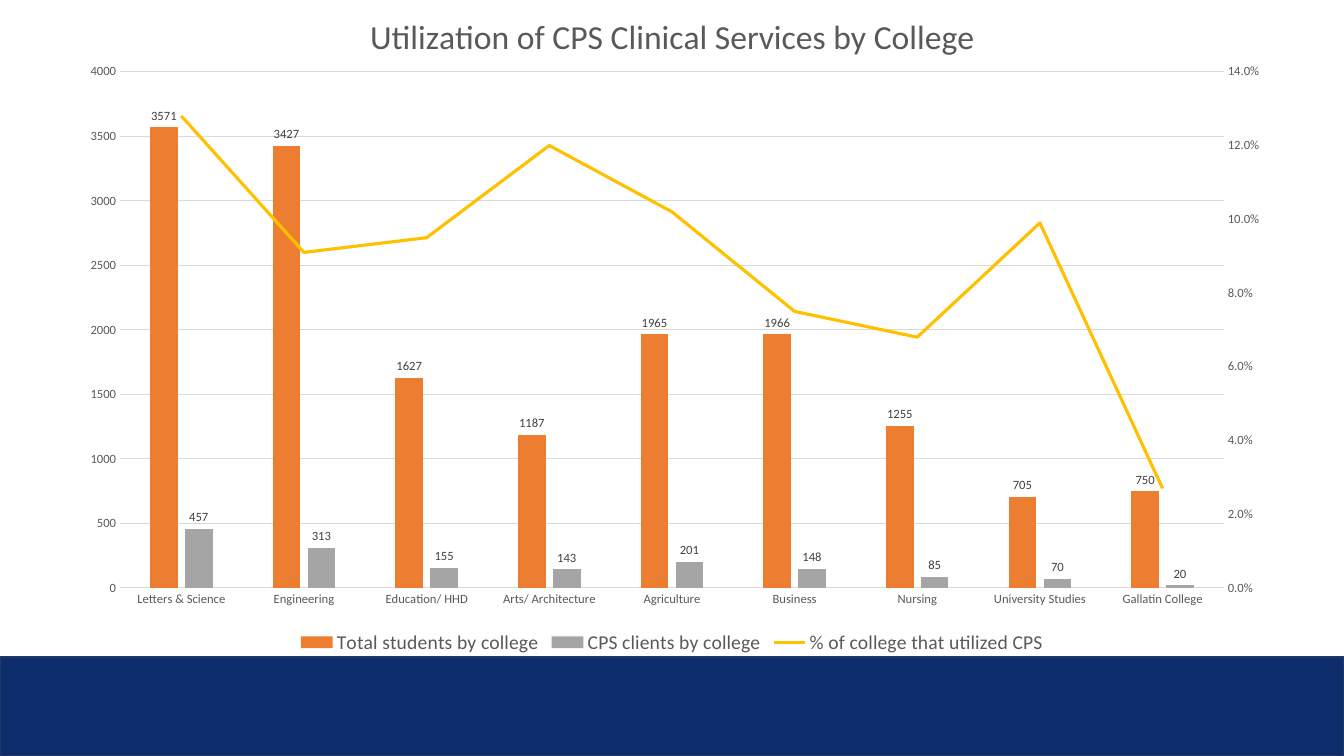
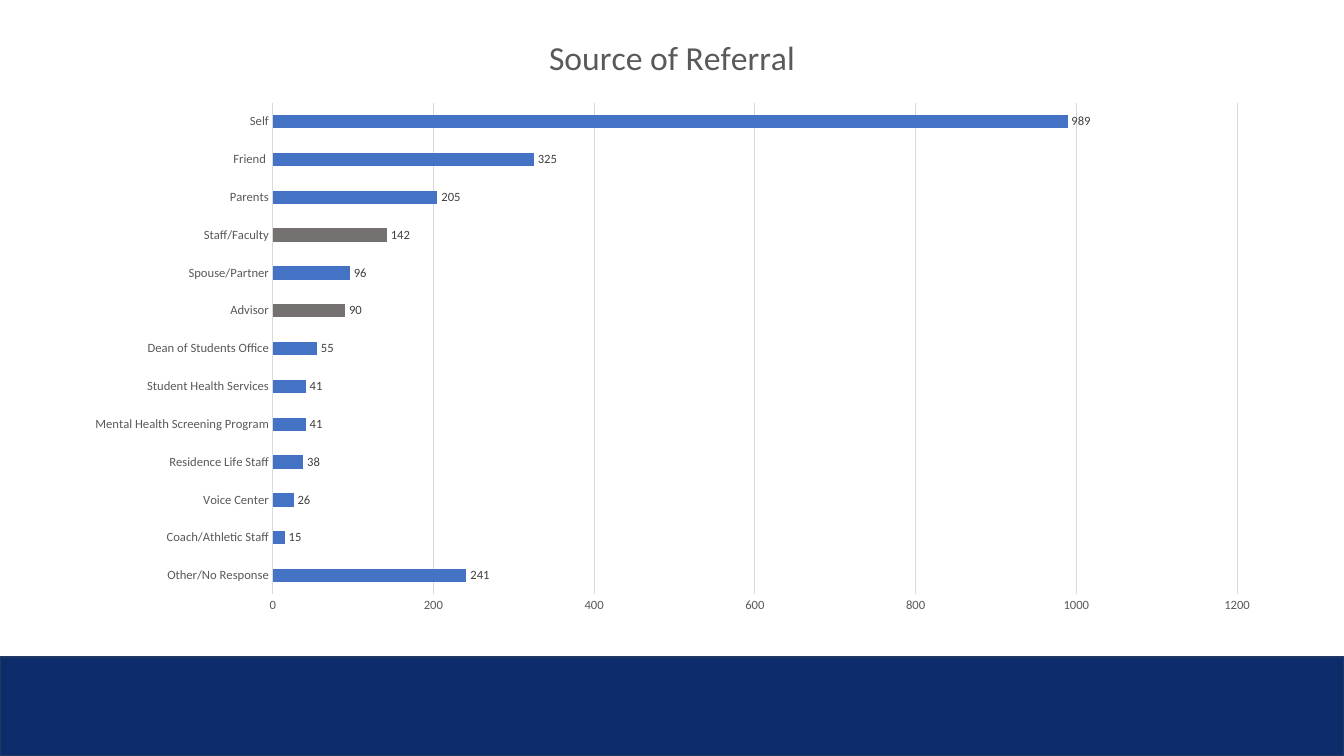
import copy

from pptx import Presentation
from pptx import util as u
from pptx.chart import axis as axes
from pptx.chart import data as chart_data
from pptx.dml.color import RGBColor
from pptx.enum import chart as kinds
from pptx.enum import shapes
from pptx.oxml import parse_xml
from pptx.oxml.ns import nsdecls, qn

COLORS = {
    "band": "0D2C6C", "band_edge": "203864", "text": "595959", "label": "404040",
    "grid": "D9D9D9", "students": "ED7D31", "clients": "A5A5A5", "share": "FFC000",
    "referral": "4472C4", "campus_staff": "767171", "base": "000000",
}
FONT = "Calibri"
COLUMNS, ROWS = 19, 100
BAND_ROW = 86.9

COLLEGES = [
    # name, total students, clients, share of college
    ("Letters & Science", 3571, 457, 0.128),
    ("Engineering", 3427, 313, 0.091),
    ("Education/ HHD", 1627, 155, 0.095),
    ("Arts/ Architecture", 1187, 143, 0.12),
    ("Agriculture", 1965, 201, 0.102),
    ("Business", 1966, 148, 0.075),
    ("Nursing", 1255, 85, 0.068),
    ("University Studies", 705, 70, 0.099),
    ("Gallatin College", 750, 20, 0.027),
]
REFERRALS = {
    "Other/No Response": 241, "Coach/Athletic Staff": 15, "Voice Center": 26,
    "Residence Life Staff": 38, "Mental Health Screening Program": 41,
    "Student Health Services": 41, "Dean of Students Office": 55, "Advisor": 90,
    "Spouse/Partner": 96, "Staff/Faculty": 142, "Parents": 205, "Friend ": 325,
    "Self": 989,
}


def rgb(name):
    return RGBColor.from_string(COLORS[name])


class Slides:
    """Holds the shared style and the current slide."""

    def __init__(self):
        self.deck = Presentation()
        self.deck.slide_width, self.deck.slide_height = u.Inches(13.33), u.Inches(7.5)
        self.layout = self.deck.slide_layouts[6]
        for holder in list(self.layout.placeholders):
            holder.element.getparent().remove(holder.element)
        self.page = None

    def open_page(self):
        self.page = self.deck.slides.add_slide(self.layout)
        self.add_band()

    def place(self, column, row, columns, rows):
        wide = self.deck.slide_width / COLUMNS
        high = self.deck.slide_height / ROWS
        return [int(n) for n in (column * wide, row * high, columns * wide, rows * high)]

    def add_band(self):
        band = self.page.shapes.add_shape(
            shapes.MSO_SHAPE.RECTANGLE, *self.place(0, BAND_ROW, COLUMNS, ROWS - BAND_ROW))
        band.shadow.inherit = False
        band.fill.solid()
        band.fill.fore_color.rgb = rgb("band")
        band.line.color.rgb = rgb("band_edge")
        band.line.width = u.Pt(1)

    @staticmethod
    def set_font(font, size, color="text"):
        font.name, font.size, font.bold = FONT, u.Pt(size), False
        font.color.rgb = rgb(color)

    def add_chart(self, kind, spot, title, categories, series, gap, top, step, plot_area):
        data = chart_data.CategoryChartData()
        data.categories = categories
        for name, values, number_format in series:
            data.add_series(name, values, number_format)
        chart = self.page.shapes.add_chart(kind, *self.place(*spot), data).chart
        self.set_font(chart.font, 10, "base")
        chart.has_legend = False
        # Title
        chart.has_title = True
        para = chart.chart_title.text_frame.paragraphs[0]
        para.text = title
        self.set_font(para.font, 24)
        # Axes
        for axis in (chart.category_axis, chart.value_axis):
            axis.major_tick_mark = axis.minor_tick_mark = kinds.XL_TICK_MARK.NONE
            self.set_font(axis.tick_labels.font, 9)
        chart.category_axis.has_major_gridlines = False
        value_axis = chart.value_axis
        value_axis.format.line.fill.background()
        value_axis.has_major_gridlines = True
        for part in (chart.category_axis, value_axis.major_gridlines):
            part.format.line.color.rgb = rgb("grid")
            part.format.line.width = u.Pt(0.75)
        value_axis.minimum_scale = 0
        value_axis.maximum_scale, value_axis.major_unit = top, step
        # Plot
        chart.plots[0].gap_width = gap
        chart.plots[0].vary_by_categories = False
        self.set_layout(chart._chartSpace.chart.plotArea, 0, plot_area,
                        '<c:layoutTarget val="inner"/>')
        return chart

    @staticmethod
    def set_layout(parent, index, shares, target=""):
        """Place a plot area (x, y, w, h) or a title (x, y) inside its chart."""
        for old in parent.findall(qn("c:layout")):
            parent.remove(old)
        sizes = "".join(f'<c:{key} val="{share}"/>' for key, share in zip("xywh", shares))
        parent.insert(index, parse_xml(
            f'<c:layout {nsdecls("c")}><c:manualLayout>{target}'
            f'<c:xMode val="edge"/><c:yMode val="edge"/>{sizes}</c:manualLayout></c:layout>'))

    def move_title(self, chart, x, y):
        title = chart._chartSpace.chart.find(qn("c:title"))
        self.set_layout(title, 1, (x, y))

    def style_bars(self, series, color):
        series.format.fill.solid()
        series.format.fill.fore_color.rgb = rgb(color)
        labels = series.data_labels
        labels.show_value = True
        labels.position = kinds.XL_LABEL_POSITION.OUTSIDE_END
        self.set_font(labels.font, 9, "label")

    def add_legend(self, chart):
        chart.has_legend = True
        chart.legend.position = kinds.XL_LEGEND_POSITION.BOTTOM
        chart.legend.include_in_layout = False
        self.set_font(chart.legend.font, 14)

    @staticmethod
    def last_series_to_line(chart, color, top, step, number_format):
        """Turn the last bar series into a line on a right-hand axis."""
        area = chart._chartSpace.chart.plotArea
        bars = area.find(qn("c:barChart"))
        series = bars.findall(qn("c:ser"))[-1]
        for old in series.findall(qn("c:invertIfNegative")):
            series.remove(old)
        category_id, value_id = "50010", "50020"
        lines = parse_xml(
            f'<c:lineChart {nsdecls("c")}><c:grouping val="standard"/>'
            f'<c:varyColors val="0"/><c:marker val="1"/>'
            f'<c:axId val="{category_id}"/><c:axId val="{value_id}"/></c:lineChart>')
        lines.insert(2, series)
        bars.addnext(lines)
        # Second pair of axes
        category = copy.deepcopy(area.find(qn("c:catAx")))
        value = copy.deepcopy(area.find(qn("c:valAx")))
        for axis, own, other in ((category, category_id, value_id),
                                 (value, value_id, category_id)):
            axis.find(qn("c:axId")).set("val", own)
            axis.find(qn("c:crossAx")).set("val", other)
        area.findall(qn("c:valAx"))[-1].addnext(value)
        value.addnext(category)
        axes.CategoryAxis(category).visible = False
        value.find(qn("c:axPos")).set("val", "r")
        value.find(qn("c:crosses")).set("val", "max")
        right = axes.ValueAxis(value)
        right.has_major_gridlines = False
        right.maximum_scale, right.major_unit = top, step
        right.tick_labels.number_format = number_format
        right.tick_labels.number_format_is_linked = False
        # Line style
        line = chart.plots[1].series[0]
        line.smooth = False
        line.marker.style = kinds.XL_MARKER_STYLE.NONE
        line.format.line.color.rgb = rgb(color)
        line.format.line.width = u.Pt(2.25)


def utilization_slide(slides):
    slides.open_page()
    names, students, clients, share = zip(*COLLEGES)
    chart = slides.add_chart(
        kinds.XL_CHART_TYPE.COLUMN_CLUSTERED, (1, 0, 17, 87.1),
        "Utilization of CPS Clinical Services by College", names,
        [("Total students by college", students, "General"),
         ("CPS clients by college", clients, "0"),
         ("% of college that utilized CPS", share, "0.0%")],
        gap=219, top=4000, step=500, plot_area=(0.041, 0.109, 0.918, 0.784))
    slides.move_title(chart, 0.244, 0.012)
    bars = chart.plots[0]
    bars.overlap = -27
    for series, color in zip(bars.series, ("students", "clients")):
        slides.style_bars(series, color)
    slides.last_series_to_line(chart, "share", top=0.14, step=0.02, number_format="0.0%")
    slides.add_legend(chart)


def referral_slide(slides):
    slides.open_page()
    sources = list(REFERRALS)
    chart = slides.add_chart(
        kinds.XL_CHART_TYPE.BAR_CLUSTERED, (1, 1.5, 17, 81.2), "Source of Referral",
        sources, [("Series 1", list(REFERRALS.values()), "General")],
        gap=182, top=1200, step=200, plot_area=(0.168, 0.149, 0.802, 0.801))
    series = chart.plots[0].series[0]
    slides.style_bars(series, "referral")
    for source in ("Advisor", "Staff/Faculty"):
        fill = series.points[sources.index(source)].format.fill
        fill.solid()
        fill.fore_color.rgb = rgb("campus_staff")


def main():
    slides = Slides()
    utilization_slide(slides)
    referral_slide(slides)
    slides.deck.save("out.pptx")


if __name__ == "__main__":
    main()
